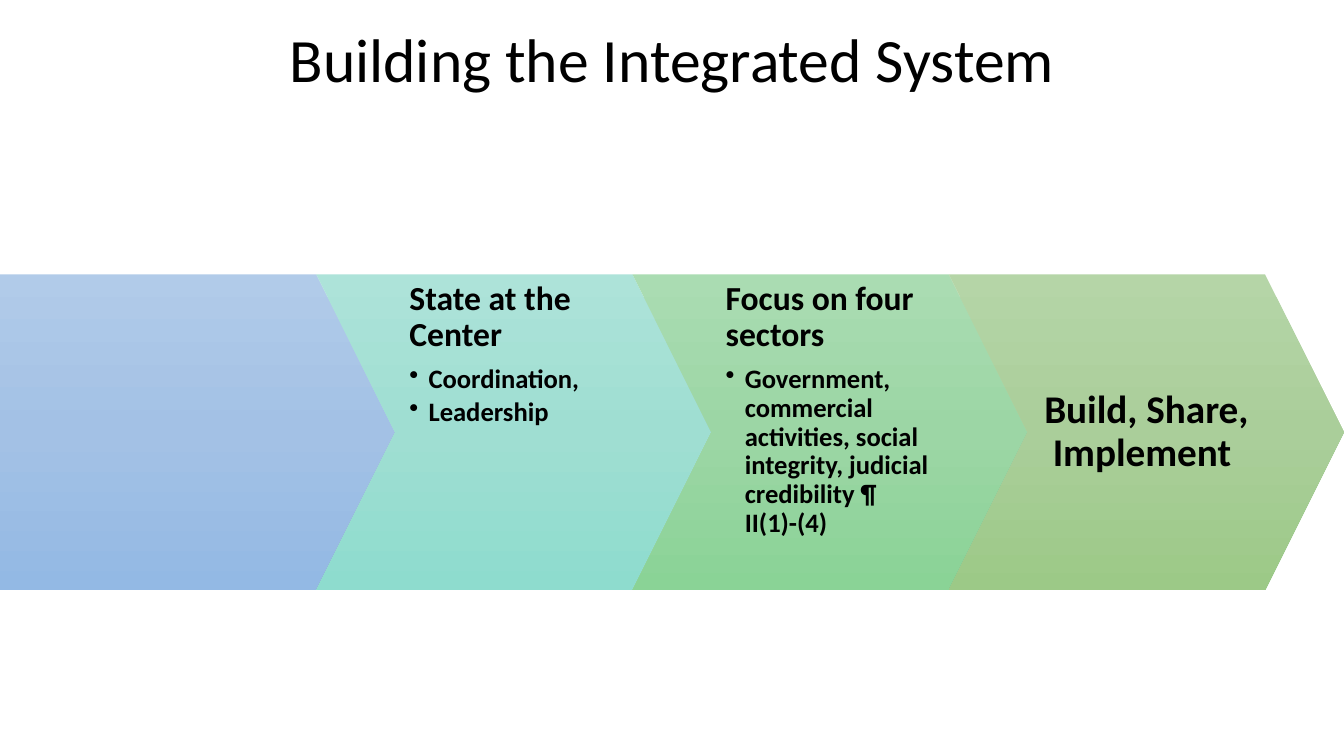
from copy import deepcopy
from dataclasses import dataclass

from lxml import etree
from pptx import Presentation
from pptx.dml.color import RGBColor
from pptx.enum.shapes import MSO_SHAPE
from pptx.enum.text import MSO_ANCHOR, PP_ALIGN
from pptx.oxml.ns import qn
from pptx.util import Emu, Inches, Pt

HOME, CHEVRON = MSO_SHAPE.PENTAGON, MSO_SHAPE.CHEVRON
TOP, MIDDLE = MSO_ANCHOR.TOP, MSO_ANCHOR.MIDDLE
LEFT, CENTER = PP_ALIGN.LEFT, PP_ALIGN.CENTER

WIDTH, HEIGHT = Inches(13.33), Inches(7.5)
UNIT = WIDTH / 17
STEP, SPAN, TALL, ROW = 4, 5, 4, 3.47
FONT = "Calibri"


@dataclass
class Stage:
    colors: tuple[str, str, str]
    head: str = ""
    items: tuple[str, ...] = ()
    size: int = 24
    align: PP_ALIGN = LEFT
    anchor: MSO_ANCHOR = TOP
    inset: float = 0.07


STAGES = [
    Stage(("B1CBE9", "A3C1E5", "93B9E4")),
    Stage(("ADE3D9", "9FDED2", "8EDCCE"), "State at the Center",
          ("Coordination,", "Leadership")),
    Stage(("AADCB2", "9CD6A5", "8AD396"), "Focus on four sectors",
          ("Government, commercial activities, social integrity, "
           "judicial credibility ¶ II(1)-(4)",)),
    Stage(("B5D5A7", "AACE9A", "9CC987"), "Build, Share, Implement ",
          size=28, align=CENTER, anchor=MIDDLE, inset=0.08),
]


def color(code: str) -> RGBColor:
    return RGBColor.from_string(code)


def grid(*cells: float) -> list[Emu]:
    return [Emu(round(cell * UNIT)) for cell in cells]


def add_box(slide, cells: tuple, anchor: MSO_ANCHOR):
    frame = slide.shapes.add_textbox(*grid(*cells)).text_frame
    frame.word_wrap = True
    frame.vertical_anchor = anchor
    return frame


def set_text(para, text: str, size: int, bold: bool, align: PP_ALIGN) -> None:
    para.text = text
    para.alignment = align
    para.line_spacing = 0.9
    font = para.font
    font.name, font.size, font.bold = FONT, Pt(size), bold
    font.color.rgb = color("000000")


def set_after(para, share: int) -> None:
    after = etree.SubElement(para._p.get_or_add_pPr(), qn("a:spcAft"))
    etree.SubElement(after, qn("a:spcPct")).set("val", str(share * 1000))


def set_bullet(para) -> None:
    props = para._p.get_or_add_pPr()
    props.set("marL", str(Inches(0.19)))
    props.set("indent", str(-Inches(0.19)))
    etree.SubElement(props, qn("a:buChar")).set("char", "•")


def add_arrow(slide, index: int, stage: Stage) -> None:
    kind = CHEVRON if index else HOME
    shape = slide.shapes.add_shape(kind, *grid(index * STEP, ROW, SPAN, TALL))
    shape.adjustments[0] = 0.25
    shape.shadow.inherit = False
    shape.line.fill.background()
    shape.fill.gradient()
    shape.fill.gradient_angle = 270
    stops = shape._element.spPr.find(".//" + qn("a:gsLst"))
    stops.append(deepcopy(stops[0]))
    for pos, (stop, code) in enumerate(zip(shape.fill.gradient_stops, stage.colors)):
        stop.position = pos / 2
        stop.color.rgb = color(code)


def add_label(slide, index: int, stage: Stage) -> None:
    cells = (index * STEP + 1, ROW, SPAN - 2, TALL)
    frame = add_box(slide, cells, stage.anchor)
    frame.margin_left = frame.margin_right = Inches(0.14)
    frame.margin_top = frame.margin_bottom = Inches(stage.inset)
    head = frame.paragraphs[0]
    set_after(head, 35)
    set_text(head, stage.head, stage.size, True, stage.align)
    for item in stage.items:
        para = frame.add_paragraph()
        para.level = 1
        set_after(para, 15)
        set_bullet(para)
        set_text(para, item, 19, True, LEFT)


def main() -> None:
    deck = Presentation()
    deck.slide_width, deck.slide_height = WIDTH, HEIGHT
    slide = deck.slides.add_slide(deck.slide_layouts[6])
    title = add_box(slide, (1.17, 0, 14.67, 1.59), MIDDLE)
    set_text(title.paragraphs[0], "Building the Integrated System", 44, False, CENTER)
    for index, stage in enumerate(STAGES):
        add_arrow(slide, index, stage)
        if stage.head:
            add_label(slide, index, stage)
    deck.save("out.pptx")


if __name__ == "__main__":
    main()
